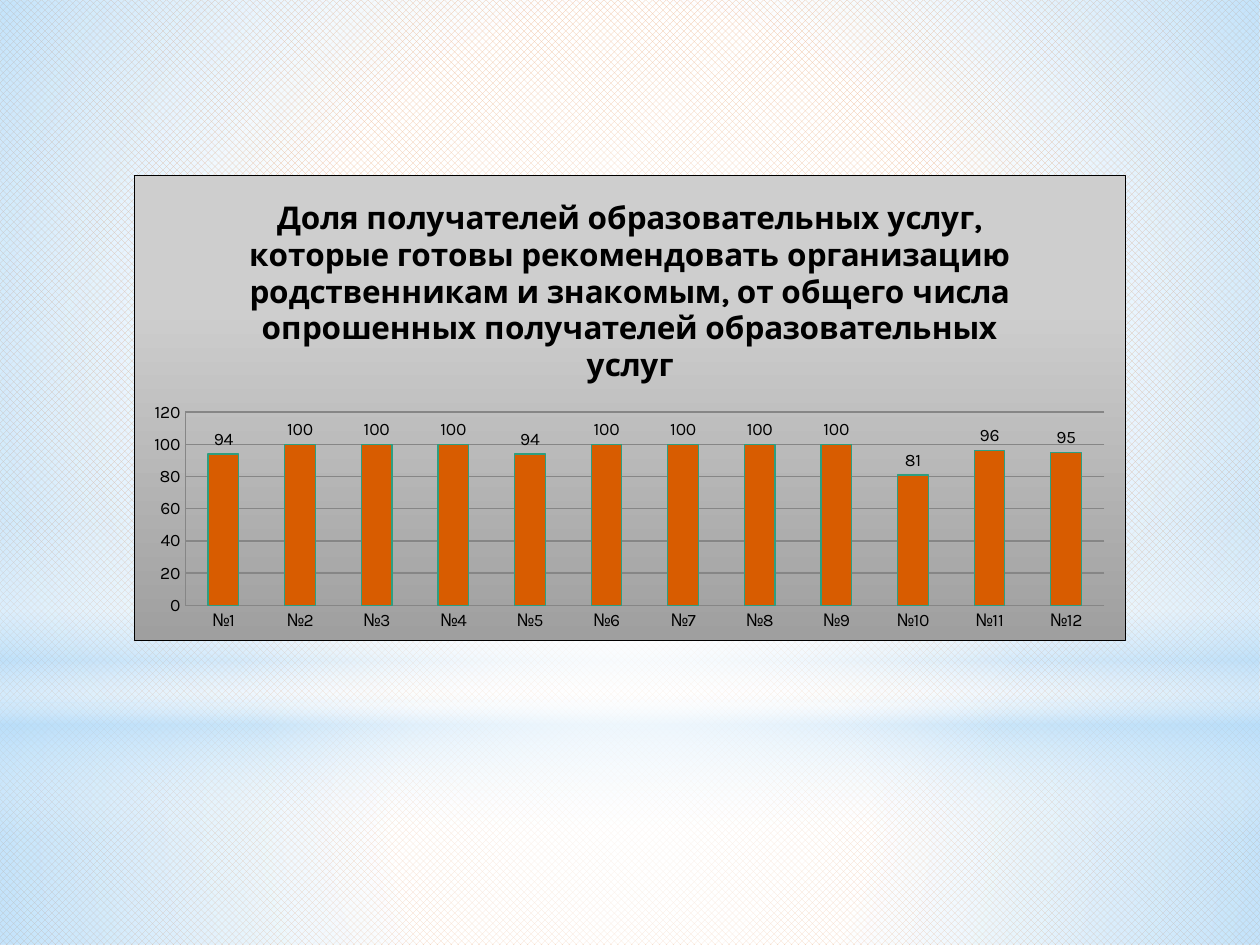
from pptx import Presentation
from pptx.chart.data import CategoryChartData
from pptx.dml.color import RGBColor
from pptx.enum.chart import XL_CHART_TYPE, XL_LABEL_POSITION, XL_TICK_MARK
from pptx.enum.dml import MSO_PATTERN
from pptx.enum.shapes import MSO_SHAPE
from pptx.oxml import parse_xml
from pptx.oxml.ns import nsdecls, qn
from pptx.util import Emu, Pt

# Content
TITLE = ("Доля получателей образовательных услуг, которые готовы рекомендовать "
         "организацию родственникам и знакомым, от общего числа опрошенных "
         "получателей образовательных услуг")
VALUES = [94, 100, 100, 100, 94, 100, 100, 100, 100, 81, 96, 95]
FONT = "Karla"
HEX = dict(white="FFFFFF", sky="B4DCFA", bar="D85C00", edge="2E9E80",
           grid="868686", text="000000", light="CECECE", dark="9F9F9F")

# Backdrop: shape, box in px, angle (None = circular), stops (%, colour, opacity %)
LAYERS = [
    ("RECTANGLE", (0, 703, 1260, 242), None,
     [(0, "white", 91), (37, "white", 76), (100, "sky", 79)]),
    ("RECTANGLE", (0, 0, 1260, 703), None,
     [(0, "white", 89), (48, "white", 62), (100, "sky", 79)]),
    ("RECTANGLE", (0, 519, 1260, 315), 90,
     [(0, "white", 0), (29, "white", 30), (45, "sky", 40),
      (55, "white", 26), (65, "sky", 60), (100, "white", 0)]),
    ("OVAL", (0, 220, 1260, 703), None,
     [(0, "white", 100), (56, "white", 0)]),
]
PANEL = (134, 175, 992, 466)
PLOT = (185, 412, 921, 194)
SHADE = [(28, "light", 100), (100, "dark", 100)]


def px(n):
    return Emu(round(n * 914400 / 126))


def rgb(name):
    return RGBColor.from_string(HEX[name])


def grad(stops, angle):
    marks = "".join(
        f'<a:gs pos="{pos * 1000}"><a:srgbClr val="{HEX[name]}">'
        f'<a:alpha val="{alpha * 1000}"/></a:srgbClr></a:gs>'
        for pos, name, alpha in stops)
    if angle is None:
        way = ('<a:path path="circle"><a:fillToRect l="50000" t="50000" '
               'r="50000" b="50000"/></a:path>')
    else:
        way = f'<a:lin ang="{angle * 60000}" scaled="0"/>'
    return (f'<a:gradFill {nsdecls("a")} rotWithShape="1">'
            f'<a:gsLst>{marks}</a:gsLst>{way}</a:gradFill>')


def style(item, values):
    for key, value in values.items():
        setattr(item, key, value)


deck = Presentation()
style(deck, dict(slide_width=px(1260), slide_height=px(945)))
slide = deck.slides.add_slide(deck.slide_layouts[6])

# Background
back = slide.background.fill
back.patterned()
back.pattern = MSO_PATTERN.SOLID_DIAMOND
back.fore_color.rgb = rgb("bar")
back.back_color.rgb = rgb("white")
for kind, box, angle, stops in LAYERS:
    layer = slide.shapes.add_shape(MSO_SHAPE[kind], *map(px, box))
    layer.shadow.inherit = False
    layer.line.fill.background()
    layer.fill.background()
    props = layer.fill._xPr
    props.replace(props.find(qn("a:noFill")), parse_xml(grad(stops, angle)))

# Chart
data = CategoryChartData()
data.categories = [f"№{i}" for i in range(1, len(VALUES) + 1)]
data.add_series("Series 1", VALUES)
chart = slide.shapes.add_chart(
    XL_CHART_TYPE.COLUMN_CLUSTERED, *map(px, PANEL), data).chart
style(chart, dict(has_legend=False, has_title=True))
style(chart.font, dict(name=FONT, size=Pt(10)))
chart.font.color.rgb = rgb("text")

# Title
head = chart.chart_title
head.include_in_layout = False
head.text_frame.text = TITLE
font = head.text_frame.paragraphs[0].runs[0].font
style(font, dict(name=FONT, size=Pt(18), bold=True))
font.color.rgb = rgb("text")

# Axes
for axis in (chart.category_axis, chart.value_axis):
    style(axis, dict(major_tick_mark=XL_TICK_MARK.NONE,
                     minor_tick_mark=XL_TICK_MARK.NONE))
    axis.format.line.color.rgb = rgb("grid")
scale = chart.value_axis
style(scale, dict(minimum_scale=0, maximum_scale=120, major_unit=20,
                  has_major_gridlines=True))
scale.major_gridlines.format.line.color.rgb = rgb("grid")

# Bars and labels
plot = chart.plots[0]
style(plot, dict(gap_width=150, vary_by_categories=False, has_data_labels=True))
style(plot.data_labels, dict(show_value=True,
                             position=XL_LABEL_POSITION.OUTSIDE_END))
bars = plot.series[0].format
bars.fill.solid()
bars.fill.fore_color.rgb = rgb("bar")
bars.line.color.rgb = rgb("edge")
bars.line.width = Pt(0.75)

# Panel fill and border
root = chart._chartSpace
root.find(qn("c:txPr")).addprevious(parse_xml(
    f'<c:spPr {nsdecls("c", "a")}>{grad(SHADE, 90)}<a:ln w="9525"><a:solidFill>'
    f'<a:srgbClr val="{HEX["text"]}"/></a:solidFill></a:ln></c:spPr>'))

# Plot position inside the panel
left, top, wide, high = PANEL
part = dict(x=(PLOT[0] - left) / wide, y=(PLOT[1] - top) / high,
            w=PLOT[2] / wide, h=PLOT[3] / high)
modes = "".join(f'<c:{k}Mode val="edge"/>' for k in "xy")
sizes = "".join(f'<c:{k} val="{v:.3f}"/>' for k, v in part.items())
area = root.chart.plotArea
for old in area.findall(qn("c:layout")):
    area.remove(old)
area.insert(0, parse_xml(
    f'<c:layout {nsdecls("c")}><c:manualLayout><c:layoutTarget val="inner"/>'
    f'{modes}{sizes}</c:manualLayout></c:layout>'))

deck.save("out.pptx")
